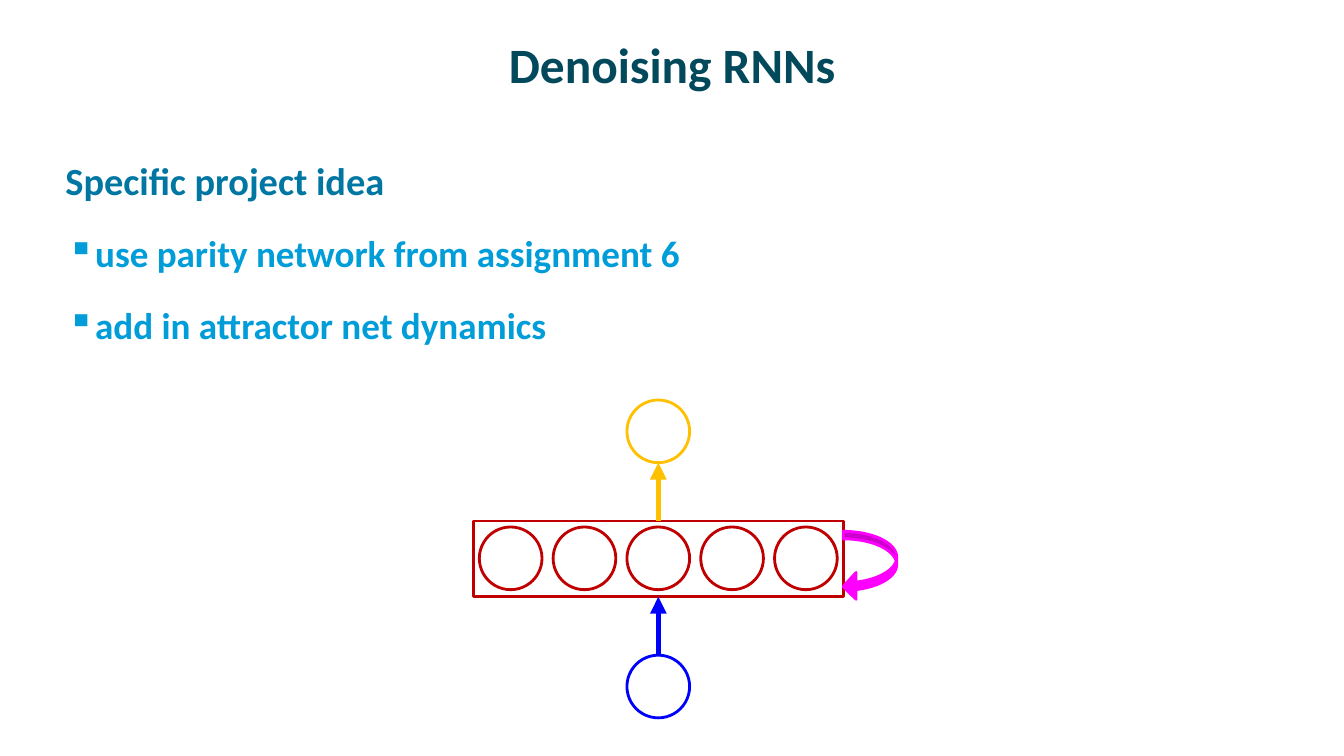
from lxml import etree
from pptx import Presentation
from pptx.dml.color import RGBColor
from pptx.enum.shapes import MSO_CONNECTOR, MSO_SHAPE
from pptx.enum.text import MSO_ANCHOR, PP_ALIGN
from pptx.oxml.ns import qn
from pptx.util import Cm, Pt

COLORS = {
    "title": "03495C", "heading": "0076A3", "bullet": "009DD9",
    "input": "0000FF", "hidden": "C00000", "output": "FFC000",
    "recurrence": "FF00FF",
}

prs = Presentation()
prs.slide_width, prs.slide_height = Cm(33.87), Cm(19.05)
slide = prs.slides.add_slide(prs.slide_layouts[6])


def add_text(left, top, width, height, lines):
    frame = slide.shapes.add_textbox(Cm(left), Cm(top), Cm(width), Cm(height)).text_frame
    frame.word_wrap = True
    frame.margin_left = frame.margin_right = Cm(0.28)
    frame.margin_top = frame.margin_bottom = Cm(0.15)
    frame.text = "\n".join(text for text, size, color in lines)
    for paragraph, (text, size, color) in zip(frame.paragraphs, lines):
        font = paragraph.runs[0].font
        font.name, font.size, font.bold = "Calibri", Pt(size), True
        font.color.rgb = RGBColor.from_string(COLORS[color])
    return frame


def add_unit(kind, left, top, width, height, color):
    unit = slide.shapes.add_shape(kind, Cm(left), Cm(top), Cm(width), Cm(height))
    unit.shadow.inherit = False
    unit.fill.background()
    unit.line.color.rgb = RGBColor.from_string(COLORS[color])
    unit.line.width = Pt(2)
    return unit


# Title
title = add_text(1.7, 0.43, 30.48, 2.34, [("Denoising RNNs", 35.3, "title")])
title.vertical_anchor = MSO_ANCHOR.MIDDLE
title.paragraphs[0].alignment = PP_ALIGN.CENTER

# Heading and bullets
idea = add_text(1.12, 3.81, 31.04, 13.21, [
    ("Specific project idea", 27.4, "heading"),
    ("use parity network from assignment 6", 26.5, "bullet"),
    ("add in attractor net dynamics", 26.5, "bullet"),
])
for level, paragraph in enumerate(idea.paragraphs):
    paragraph.space_before = Pt(19.5)
    props = paragraph._p.get_or_add_pPr()
    if level == 0:
        props.set("marL", str(Cm(0.25)))
    else:
        props.set("marL", str(Cm(0.99)))
        props.set("indent", str(Cm(-0.69)))
        etree.SubElement(props, qn("a:buChar")).set("char", "▪")

# Network layers
center, diameter, pitch = 16.59, 1.58, 1.86
hidden_top, hidden_width, hidden_height = 13.13, 9.32, 1.91
output_top, input_top = 10.08, 16.51
hidden_bottom = hidden_top + hidden_height
unit_left = center - diameter / 2

add_unit(MSO_SHAPE.OVAL, unit_left, input_top, diameter, diameter, "input")
for step in range(-2, 3):
    add_unit(MSO_SHAPE.OVAL, unit_left + step * pitch, 13.28, diameter, diameter, "hidden")
add_unit(MSO_SHAPE.RECTANGLE, center - hidden_width / 2, hidden_top,
         hidden_width, hidden_height, "hidden")
add_unit(MSO_SHAPE.OVAL, unit_left, output_top, diameter, diameter, "output")

# Feedforward arrows
for start, end, color in [(hidden_top, output_top + diameter, "output"),
                          (input_top, hidden_bottom, "input")]:
    arrow = slide.shapes.add_connector(
        MSO_CONNECTOR.STRAIGHT, Cm(center), Cm(start), Cm(center), Cm(end))
    arrow.line.color.rgb = RGBColor.from_string(COLORS[color])
    arrow.line.width = Pt(4)
    etree.SubElement(arrow.line._get_or_add_ln(), qn("a:tailEnd")).set("type", "triangle")
    etree.SubElement(arrow._element.spPr, qn("a:effectLst"))

# Recurrent arrow
recurrence = add_unit(MSO_SHAPE.CURVED_LEFT_ARROW, center + hidden_width / 2, 13.39,
                      1.35, 1.73, "recurrence")
recurrence.fill.solid()
recurrence.fill.fore_color.rgb = RGBColor.from_string(COLORS["recurrence"])
for index, ratio in enumerate([0.14, 0.5, 0.24]):
    recurrence.adjustments[index] = ratio

prs.save("out.pptx")
